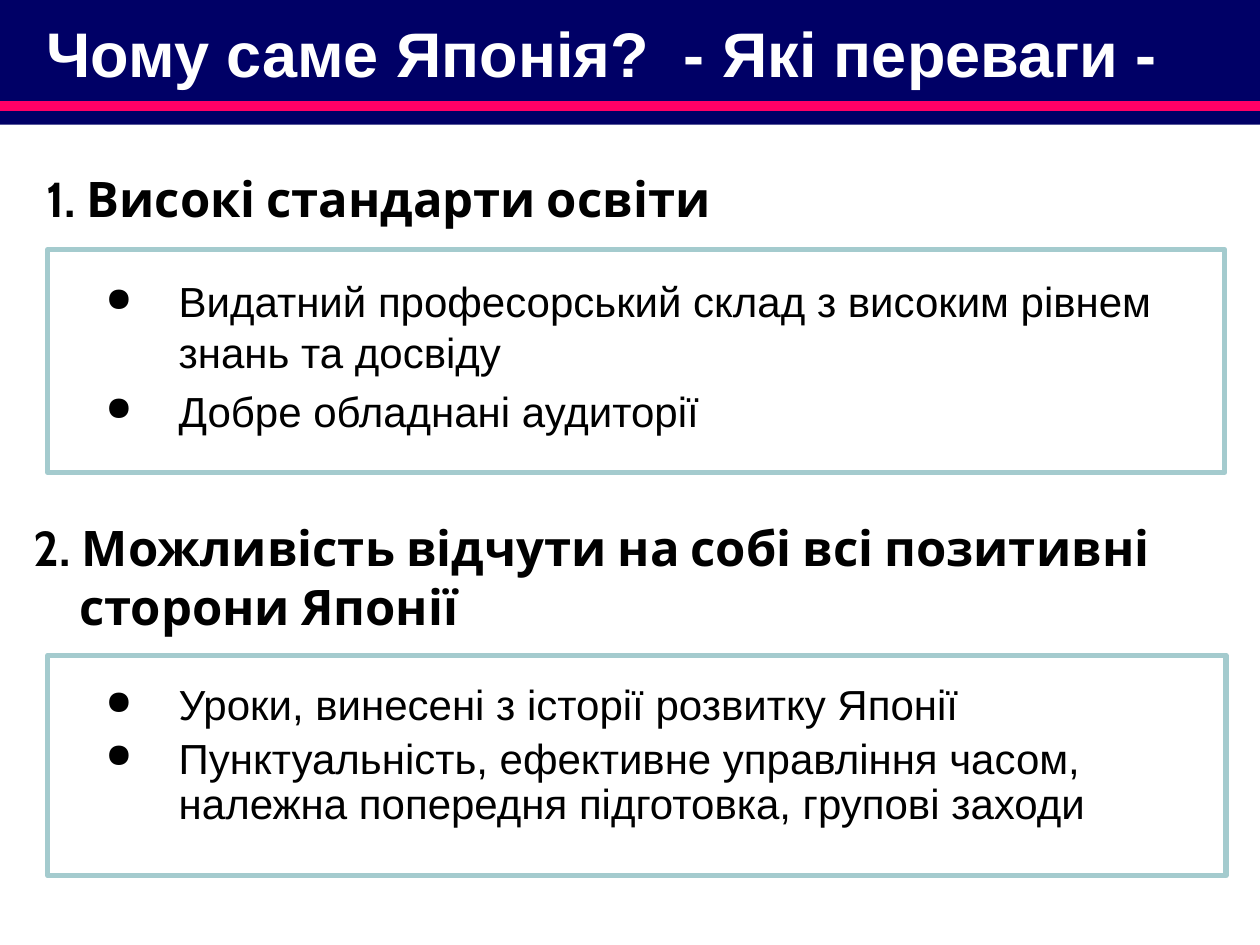
from dataclasses import dataclass

from lxml import etree
from pptx import Presentation
from pptx.dml.color import RGBColor
from pptx.enum import shapes, text
from pptx.oxml import ns
from pptx.util import Inches, Pt


@dataclass(frozen=True)
class Theme:
    navy: RGBColor = RGBColor(0x00, 0x00, 0x66)
    pink: RGBColor = RGBColor(0xFF, 0x00, 0x66)
    frame: RGBColor = RGBColor(0xA4, 0xCB, 0xCE)
    white: RGBColor = RGBColor(0xFF, 0xFF, 0xFF)
    black: RGBColor = RGBColor(0x00, 0x00, 0x00)
    body_font: str = "Arial"
    heading_font: str = "Cabin"
    title_size: int = 36
    heading_size: int = 28
    body_size: int = 24


THEME = Theme()


def add_child(parent, tag, **attributes):
    values = {name: str(value) for name, value in attributes.items()}
    return etree.SubElement(parent, ns.qn(tag), values)


def set_indent(paragraph, left, first_line):
    properties = paragraph._p.get_or_add_pPr()
    properties.set("marL", str(Inches(left)))
    properties.set("indent", str(Inches(first_line)))
    return properties


def set_font(paragraph, name, size, color, bold=False):
    paragraph.font.name = name
    paragraph.font.size = Pt(size)
    paragraph.font.color.rgb = color
    paragraph.font.bold = bold


def add_rectangle(slide, left, top, width, height, fill, outline=None):
    shape = slide.shapes.add_shape(
        shapes.MSO_SHAPE.RECTANGLE,
        Inches(left), Inches(top), Inches(width), Inches(height))
    shape.shadow.inherit = False
    shape.fill.solid()
    shape.fill.fore_color.rgb = fill
    if outline is None:
        shape.line.fill.background()
    else:
        shape.line.color.rgb = outline
        shape.line.width = Pt(3)


def add_paragraphs(slide, left, top, width, height, lines,
                   anchor=text.MSO_ANCHOR.TOP):
    """Add a wrapping text box and return its paragraphs, one per line."""
    box = slide.shapes.add_textbox(
        Inches(left), Inches(top), Inches(width), Inches(height))
    frame = box.text_frame
    frame.word_wrap = True
    frame.vertical_anchor = anchor
    frame.text = "\n".join(lines)
    return frame.paragraphs


def add_title_band(slide, title):
    add_rectangle(slide, 0, 0, 10, 0.99, THEME.navy)
    stripe = slide.shapes.add_connector(
        shapes.MSO_CONNECTOR.STRAIGHT,
        Inches(0), Inches(0.84), Inches(10), Inches(0.84))
    stripe.line.color.rgb = THEME.pink
    stripe.line.width = Pt(6)
    add_child(stripe._element.spPr, "a:effectLst")

    paragraph, = add_paragraphs(slide, 0.27, 0.21, 9.46, 0.41, [title],
                                text.MSO_ANCHOR.MIDDLE)
    tabs = add_child(paragraph._p.get_or_add_pPr(), "a:tabLst")
    add_child(tabs, "a:tab", pos=Inches(5.06), algn="l")
    set_font(paragraph, THEME.body_font, THEME.title_size, THEME.white, True)


def add_heading(slide, left, top, width, height, lines, indents=(0,)):
    paragraphs = add_paragraphs(slide, left, top, width, height, lines)
    for paragraph, indent in zip(paragraphs, indents):
        set_indent(paragraph, indent, 0)
        set_font(paragraph, THEME.heading_font, THEME.heading_size,
                 THEME.black, True)


def add_bullets(slide, left, top, width, height, items, line_spacing=1.0):
    paragraphs = add_paragraphs(slide, left, top, width, height, items)
    for index, paragraph in enumerate(paragraphs):
        properties = set_indent(paragraph, 0.58, -0.58)
        add_child(properties, "a:buSzPct", val=80000)
        add_child(properties, "a:buChar", char="●")
        paragraph.line_spacing = line_spacing
        paragraph.space_before = Pt(0.2 * THEME.body_size if index else 0)
        set_font(paragraph, THEME.body_font, THEME.body_size, THEME.black)


def main():
    presentation = Presentation()
    presentation.slide_width = Inches(10)
    presentation.slide_height = Inches(7.5)
    slide = presentation.slides.add_slide(presentation.slide_layouts[6])

    add_title_band(slide, "Чому саме Японія?\t- Які переваги -")

    add_rectangle(slide, 0.38, 1.98, 9.34, 1.77, THEME.white, THEME.frame)
    add_bullets(slide, 0.74, 2.14, 9.46, 1.43, [
        "Видатний професорський склад з високим рівнем знань та досвіду",
        "Добре обладнані аудиторії",
    ])
    add_rectangle(slide, 0.38, 5.2, 9.35, 1.75, THEME.white, THEME.frame)
    add_bullets(slide, 0.74, 5.38, 9.35, 1.8, [
        "Уроки, винесені з історії розвитку Японії",
        "Пунктуальність, ефективне управління часом, "
        "належна попередня підготовка, групові заходи",
    ], line_spacing=0.9)

    add_heading(slide, 0.27, 1.29, 8.74, 0.57, ["1. Високі стандарти освіти"])
    add_heading(slide, 0.03, 4.06, 9.97, 1.04, [
        "2. Можливість відчути на собі всі позитивні",
        "сторони Японії",
    ], indents=(0.14, 0.5))

    presentation.save("out.pptx")


if __name__ == "__main__":
    main()
